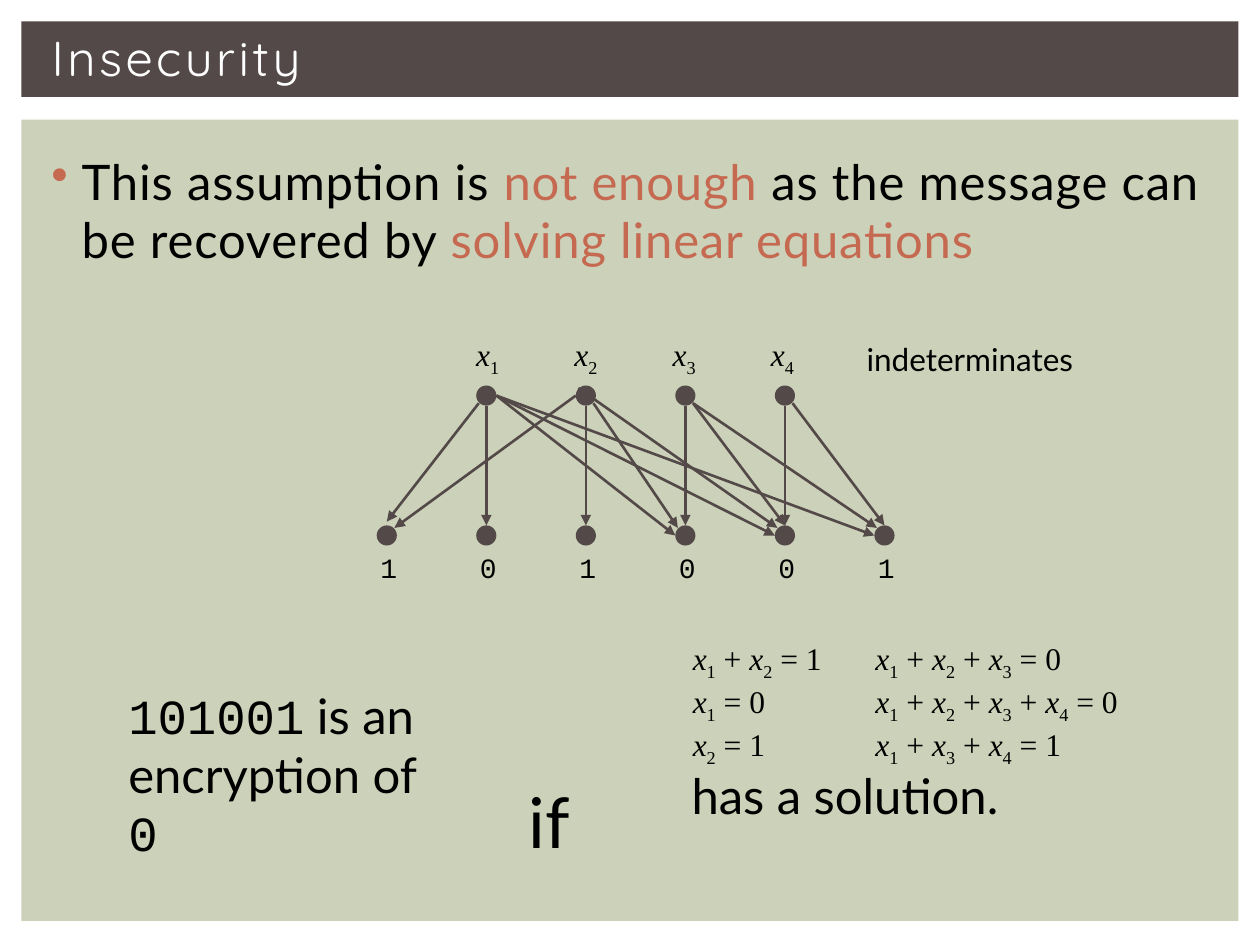
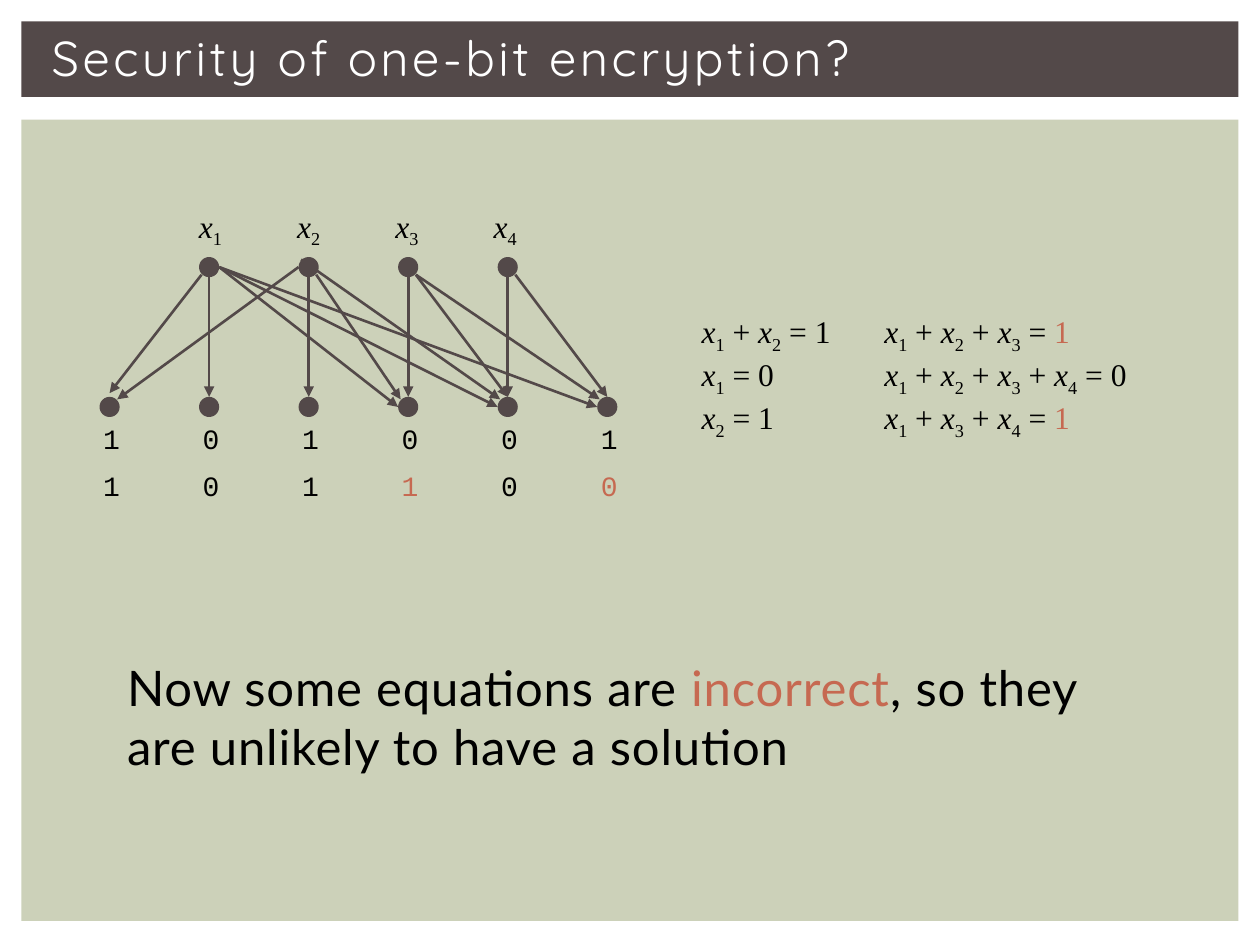
from lxml import etree
from pptx import Presentation
from pptx.dml.color import RGBColor
from pptx.enum import shapes, text
from pptx.oxml.ns import qn
from pptx.util import Inches, Pt

DARK, SAGE, RUST, BLACK, WHITE = "534949", "CCD1B9", "C66951", "000000", "FFFFFF"
BODY, HEADING, MATH, CODE = "Lato", "Quicksand", "Times New Roman", "Courier New"

PITCH, DOT = 0.79, 0.16
UPPER_TOP, LOWER_TOP, BITS_TOP, BITS_STEP = 0.45, 1.56, 1.71, 0.37
CIPHERTEXT, NOISY_CIPHERTEXT = "101001", "101100"
SIDES = {
    "top": (0, -0.08), "above": (0, -0.11), "bottom": (0, 0.08),
    "left": (-0.08, 0), "right": (0.08, 0),
    "upper left": (-0.06, -0.06), "upper right": (0.06, -0.06),
    "lower left": (-0.06, 0.06), "lower right": (0.06, 0.06),
}
EDGES = [
    (2, "left", 0, "upper right"), (1, "lower left", 0, "above"),
    (3, "lower right", 4, "top"), (1, "bottom", 1, "top"),
    (2, "bottom", 2, "top"), (3, "bottom", 3, "top"),
    (2, "lower right", 3, "upper left"), (1, "right", 3, "left"),
    (2, "upper left", 4, "upper left"), (1, "right", 4, "left"),
    (4, "bottom", 4, "top"), (4, "lower right", 5, "top"),
    (3, "lower right", 5, "upper left"), (1, "right", 5, "left"),
]
FIRST_EQUATIONS = ["x1 + x2 = 1", "x1 = 0", "x2 = 1"]


def rgb(hex_colour):
    """Turn a hex string into a colour."""
    return RGBColor.from_string(hex_colour)


def style(font, name=None, size=None, colour=None):
    """Set the given properties of a font."""
    if name:
        font.name = name
    if size:
        font.size = Pt(size)
    if colour:
        font.color.rgb = rgb(colour)


def add_run(paragraph, words, name=None, colour=None, italic=None, **attributes):
    """Add a run with its own font, colour and raw run attributes."""
    run = paragraph.add_run()
    run.text = words
    style(run.font, name, colour=colour)
    run.font.italic = italic
    for key, value in attributes.items():
        run.font._element.set(key, value)


def add_text(slide, left, top, width, height, size, name=BODY, colour=BLACK, lines=1, wrap=True):
    """Add a text box and return its styled, empty paragraphs."""
    frame = slide.shapes.add_textbox(
        Inches(left), Inches(top), Inches(width), Inches(height)).text_frame
    frame.word_wrap = wrap
    for _ in range(lines - 1):
        frame.add_paragraph()
    for paragraph in frame.paragraphs:
        style(paragraph.font, name, size, colour)
    return frame.paragraphs


def add_filled(slide, kind, left, top, width, height, colour):
    """Add a flat shape without outline."""
    shape = slide.shapes.add_shape(
        kind, Inches(left), Inches(top), Inches(width), Inches(height))
    shape.shadow.inherit = False
    shape.fill.solid()
    shape.fill.fore_color.rgb = rgb(colour)
    shape.line.fill.background()
    return shape


def add_arrow(slide, start, end):
    """Add a dark arrow between two points."""
    arrow = slide.shapes.add_connector(
        shapes.MSO_CONNECTOR.STRAIGHT, *(Inches(value) for value in start + end))
    arrow.line.color.rgb = rgb(DARK)
    arrow.line.width = Pt(1.5)
    etree.SubElement(arrow.line._get_or_add_ln(), qn("a:tailEnd"), type="triangle")
    etree.SubElement(arrow._element.spPr, qn("a:effectLst"))


def add_layout_bands(slide):
    """Draw the two bands and move them to the layout behind the title."""
    tree = slide.slide_layout.shapes._spTree
    for top, height, colour in [(0.17, 0.6, DARK), (0.95, 6.36, SAGE)]:
        band = add_filled(
            slide, shapes.MSO_SHAPE.RECTANGLE, 0.17, top, 9.66, height, colour)
        tree.insert(2, band._element)


def add_title(slide, words):
    """Place and format the slide title."""
    title = slide.shapes.title
    title.left, title.top = Inches(0.31), Inches(0.16)
    title.width, title.height = Inches(9.4), Inches(0.59)
    title.text_frame.vertical_anchor = text.MSO_ANCHOR.MIDDLE
    title.text_frame.auto_size = text.MSO_AUTO_SIZE.NONE
    paragraph = title.text_frame.paragraphs[0]
    paragraph.alignment = text.PP_ALIGN.LEFT
    style(paragraph.font, HEADING, 28, WHITE)
    add_run(paragraph, words, spc="200")


def add_message(slide, left, top, width, height, parts):
    """Add a spaced sentence of (words, colour) parts and return its paragraph."""
    paragraph = add_text(slide, left, top, width, height, 28)[0]
    for words, colour in parts:
        add_run(paragraph, words, colour=colour, spc="50")
    return paragraph


def add_bullet(paragraph):
    """Give a paragraph a hanging rust bullet."""
    properties = paragraph._p.get_or_add_pPr()
    properties.set("marL", str(Inches(0.24)))
    properties.set("indent", str(-Inches(0.24)))
    colour = etree.Element(qn("a:buClr"))
    etree.SubElement(colour, qn("a:srgbClr"), val=RUST)
    bullet = etree.Element(qn("a:buChar"), char="•")
    properties.insert(0, colour)
    properties.insert(1, bullet)


def add_formula(paragraph, formula):
    """Write a formula: x terms get subscripts, starred terms turn rust."""
    for position, term in enumerate(formula.split()):
        if position:
            add_run(paragraph, " ")
        if term.startswith("x"):
            add_run(paragraph, "x", italic=True)
            add_run(paragraph, term[1:], baseline="-25000")
        elif term.startswith("*"):
            add_run(paragraph, term[1:], colour=RUST)
        else:
            add_run(paragraph, term)


def add_equations(slide, left, top, second_equations):
    """Write the two columns of equations."""
    for offset, width, equations in [(0, 1.4, FIRST_EQUATIONS), (1.45, 2.5, second_equations)]:
        paragraphs = add_text(
            slide, left + offset, top, width, 1.01, 18, MATH, lines=3, wrap=offset > 0)
        for paragraph, equation in zip(paragraphs, equations):
            add_formula(paragraph, equation)


def add_bits(slide, left, top, bits):
    """Write a row of bits, marking those that differ from the ciphertext."""
    for column, (bit, sent) in enumerate(zip(bits, CIPHERTEXT)):
        paragraph = add_text(slide, left - 0.07 + column * PITCH, top, 0.34, 0.37, 16, CODE,
                             BLACK if bit == sent else RUST, wrap=False)[0]
        add_run(paragraph, bit)


def add_graph(slide, left, top, bit_rows):
    """Draw the bipartite graph of indeterminates and output bits."""
    for row, bits in enumerate(bit_rows):
        add_bits(slide, left, top + BITS_TOP + row * BITS_STEP, bits)
    for columns, dot_top in [(range(1, 5), UPPER_TOP), (range(6), LOWER_TOP)]:
        for column in columns:
            add_filled(slide, shapes.MSO_SHAPE.OVAL, left + column * PITCH,
                       top + dot_top, DOT, DOT, DARK)

    def anchor(column, dot_top, side):
        """Return the point on one side of a dot."""
        dx, dy = SIDES[side]
        return left + column * PITCH + DOT / 2 + dx, top + dot_top + DOT / 2 + dy

    for source, leaving, target, entering in EDGES:
        add_arrow(slide, anchor(source, UPPER_TOP, leaving), anchor(target, LOWER_TOP, entering))
    for index in range(4):
        label = add_text(slide, left + 0.69 + index * 0.78, top, 0.43, 0.4, 18, MATH, wrap=False)
        add_formula(label[0], f"x{index + 1}")


def add_claim(slide, left, top):
    """State when the ciphertext encrypts 0."""
    cipher, plain = add_text(slide, left, top, 2.73, 1.04, 28, lines=2)
    add_run(cipher, CIPHERTEXT, CODE)
    add_run(cipher, " is an")
    add_run(plain, "encryption of ")
    add_run(plain, "0", CODE)
    add_run(add_text(slide, left + 3.18, top + 0.74, 0.66, 0.77, 40, wrap=False)[0], "if")
    add_run(add_text(slide, left + 4.47, top + 0.64, 2.65, 0.57, 28, wrap=False)[0],
            "has a solution.")


def build_insecurity(slide):
    """Build the slide on solving linear equations."""
    add_title(slide, "Insecurity")
    add_bullet(add_message(slide, 0.31, 1.15, 9.34, 1.1, [
        ("This assumption is ", BLACK), ("not enough ", RUST),
        ("as the message can be recovered by ", BLACK),
        ("solving linear equations", RUST)]))
    add_graph(slide, 2.99, 2.61, [CIPHERTEXT])
    add_run(add_text(slide, 6.78, 2.65, 1.84, 0.4, 18, wrap=False)[0], "indeterminates")
    add_claim(slide, 0.92, 5.39)
    add_equations(slide, 5.4, 5.02, ["x1 + x2 + x3 = 0", "x1 + x2 + x3 + x4 = 0",
                                     "x1 + x3 + x4 = 1"])


def build_security(slide):
    """Build the slide on noisy equations."""
    add_title(slide, "Security of one-bit encryption?")
    add_graph(slide, 0.79, 1.59, [CIPHERTEXT, NOISY_CIPHERTEXT])
    add_equations(slide, 5.47, 2.43, ["x1 + x2 + x3 = *1", "x1 + x2 + x3 + x4 = 0",
                                      "x1 + x3 + x4 = *1"])
    add_message(slide, 0.91, 5.17, 8.21, 1.04, [
        ("Now some equations are ", BLACK), ("incorrect", RUST),
        (", so they are unlikely to have a solution", BLACK)])


def main():
    """Build and save the presentation."""
    deck = Presentation()
    deck.slide_width, deck.slide_height = Inches(10), Inches(7.5)
    title_only = deck.slide_layouts[5]
    insecurity, security = (deck.slides.add_slide(title_only) for _ in range(2))
    add_layout_bands(insecurity)
    build_insecurity(insecurity)
    build_security(security)
    deck.save("out.pptx")


if __name__ == "__main__":
    main()
